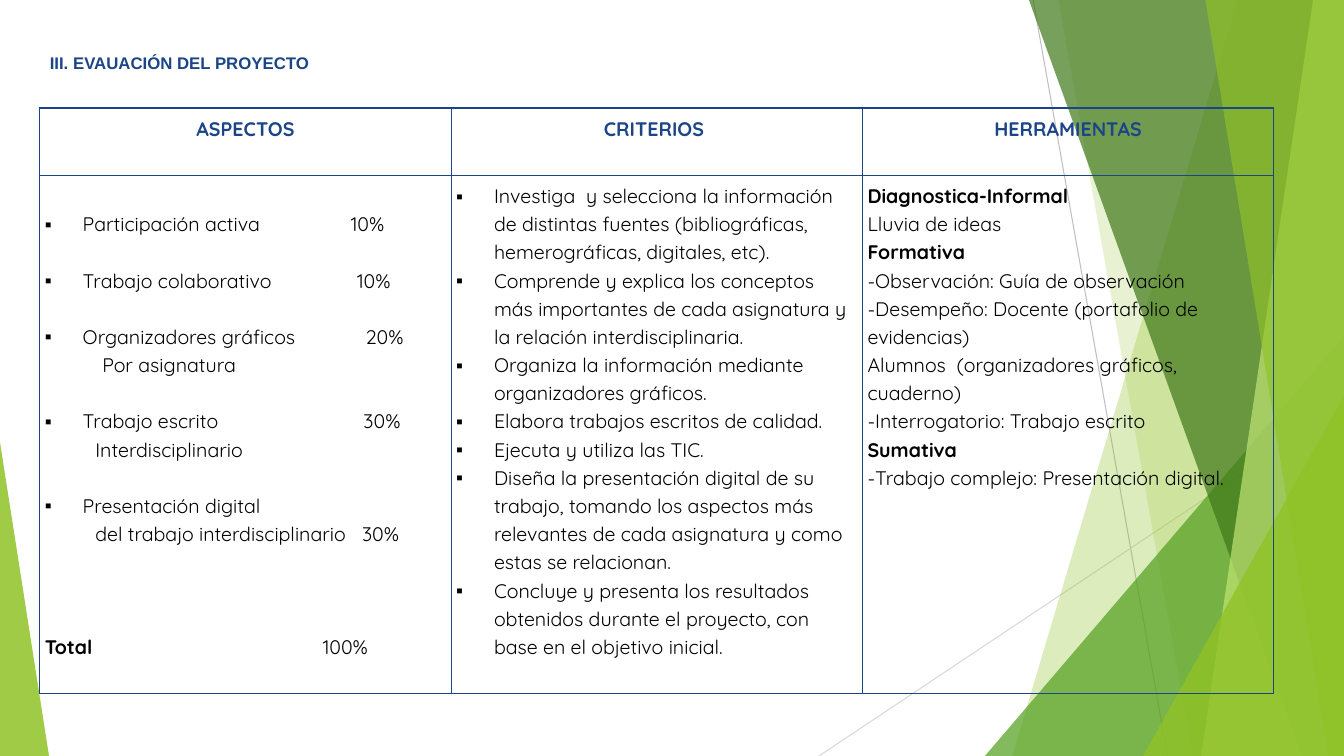
from lxml import etree
from pptx import Presentation
from pptx.dml.color import RGBColor
from pptx.enum import shapes, text
from pptx.oxml.ns import qn
from pptx.util import Pt

NAVY, LIME, LINE = "1C4587", "90C226", 20.1


def paint(fill, tone, alpha=None, node=None):
    fill.solid()
    fill.fore_color.rgb = RGBColor.from_string(tone)
    if alpha:
        clr = node.find(".//" + qn("a:srgbClr"))
        etree.SubElement(clr, qn("a:alpha"), val=str(alpha * 1000))


def write(frame, words, tail="", size=14, font="Quicksand", tone="000000", bold=False,
          align=text.PP_ALIGN.LEFT, space=1.15, gap=0, left=0, bullet=False, tab=0):
    para = frame.add_paragraph() if frame.text else frame.paragraphs[0]
    para.alignment, para.line_spacing = align, space
    para.space_before = Pt(gap)
    for part, heavy in ((words, bold), (tail, False)):
        if part:
            run = para.add_run()
            run.text = part
            run.font.size, run.font.name, run.font.bold = Pt(size), font, heavy
            paint(run.font.fill, tone)
    # A bullet hangs by its indent; a plain line hangs so that its tab meets the margin
    margin = left if bullet else max(left, tab)
    start = 0 if bullet else left
    props = para._p.get_or_add_pPr()
    props.set("marL", str(Pt(margin)))
    props.set("indent", str(Pt(start - margin)))
    if bullet:
        etree.SubElement(props, qn("a:buFont"), typeface="Arial")
        etree.SubElement(props, qn("a:buChar"), char="▪")
    else:
        etree.SubElement(props, qn("a:buNone"))
    if tab and bullet:
        stops = etree.SubElement(props, qn("a:tabLst"))
        etree.SubElement(stops, qn("a:tab"), pos=str(Pt(tab)), algn="l")


deck = Presentation()
deck.slide_width, deck.slide_height = Pt(960), Pt(540)
slide = deck.slides.add_slide(deck.slide_layouts[6])

# Thin background lines
for x1, y1, x2, y2, tone in ((738, 0, 834, 540, "BFBFBF"), (960, 290, 585, 540, "D9D9D9")):
    line = slide.shapes.add_connector(shapes.MSO_CONNECTOR.STRAIGHT, Pt(x1), Pt(y1), Pt(x2), Pt(y2))
    line.line.width = Pt(0.75)
    paint(line.line.fill, tone)
    etree.SubElement(line.element.spPr, qn("a:effectLst"))

# Green facets: full-height bands (top x, bottom x) and triangles (box, apex)
facets = [
    ((884, 723), LIME, 30),
    ((756, 852), LIME, 20),
    ((703.5, 240, 256.5, 300, 1), "54A021", 72),
    ((735, 930), "3F7819", 70),
    ((938, 858), "C0E474", 70),
    ((861, 949), LIME, 65),
    ((816.5, 283, 143.5, 257, 1), LIME, 80),
    ((0, 316, 35, 224, 0), LIME, 85),
]
for form, tone, alpha in facets:
    if len(form) == 2:
        top, low = form
        pen = slide.shapes.build_freeform(top, 0, scale=Pt(1))
        pen.add_line_segments([(960, 0), (960, 540), (low, 540)])
        facet = pen.convert_to_shape()
    else:
        facet = slide.shapes.add_shape(shapes.MSO_SHAPE.ISOSCELES_TRIANGLE, *map(Pt, form[:4]))
        facet.adjustments[0] = form[4]
    facet.shadow.inherit = False
    facet.line.fill.background()
    paint(facet.fill, tone, alpha, facet.element.spPr)

# Table grid
table = slide.shapes.add_table(2, 3, Pt(28.5), Pt(77.2), Pt(881.4), Pt(418)).table
table.first_row = table.horz_banding = False
for row, height in zip(table.rows, (48, 370)):
    row.height = Pt(height)
for col in table.columns:
    col.width = Pt(293.8)
for cell in table.iter_cells():
    cell.margin_left = cell.margin_right = cell.margin_top = cell.margin_bottom = Pt(3.6)
    props = cell._tc.get_or_add_tcPr()
    for side in ("a:lnL", "a:lnR", "a:lnT", "a:lnB"):
        edge = etree.SubElement(props, qn(side), w=str(Pt(1)))
        solid = etree.SubElement(edge, qn("a:solidFill"))
        etree.SubElement(solid, qn("a:srgbClr"), val=NAVY)
    cell.fill.background()

# Column heads
for i, head in enumerate(("ASPECTOS", "CRITERIOS ", "HERRAMIENTAS")):
    write(table.cell(0, i).text_frame, head, tone=NAVY, bold=True, align=text.PP_ALIGN.CENTER)

# Aspects: words, left indent, bullet, blank lines above, percentage stop
aspects = [
    ("Participación activa\t10%", 27, True, 0, 218.5),
    ("Trabajo colaborativo\t10%", 27, True, 1, 223),
    ("Organizadores gráficos\t20%", 27, True, 1, 229),
    ("Por asignatura", 41, False, 0, 0),
    ("Trabajo escrito\t30%", 27, True, 1, 227.5),
    ("Interdisciplinario", 36, False, 0, 0),
    ("Presentación digital", 27, True, 1, 0),
    ("del trabajo interdisciplinario\t30%", 36, False, 0, 226.5),
]
cell = table.cell(1, 0)
cell.margin_top = Pt(3.6 + LINE)
for words, left, bullet, blank, tab in aspects:
    write(cell.text_frame, words, left=left, bullet=bullet, gap=blank * LINE, tab=tab)
write(cell.text_frame, "Total", tail="\t100%", bold=True, gap=3 * LINE, tab=198.5)

# Criteria
for words in (
    "Investiga  y selecciona la información de distintas fuentes "
    "(bibliográficas, hemerográficas, digitales, etc).",
    "Comprende y explica los conceptos más importantes de cada asignatura "
    "y la relación interdisciplinaria.",
    "Organiza la información mediante organizadores gráficos.",
    "Elabora trabajos escritos de calidad.",
    "Ejecuta y utiliza las TIC.",
    "Diseña la presentación digital de su trabajo, tomando los aspectos más "
    "relevantes de cada asignatura y como estas se relacionan.",
    "Concluye y presenta los resultados obtenidos durante el proyecto, "
    "con base en el objetivo inicial.",
):
    write(table.cell(1, 1).text_frame, words, left=27, bullet=True)

# Tools, with bold group names
tools = {
    "Diagnostica-Informal": ["Lluvia de ideas"],
    "Formativa": [
        "-Observación: Guía de observación",
        "-Desempeño: Docente (portafolio de evidencias)",
        "Alumnos  (organizadores gráficos, cuaderno)",
        "-Interrogatorio: Trabajo escrito",
    ],
    "Sumativa": ["-Trabajo complejo: Presentación digital."],
}
frame = table.cell(1, 2).text_frame
for group, items in tools.items():
    write(frame, group, bold=True)
    for item in items:
        write(frame, item)

# Title
title = slide.shapes.add_textbox(Pt(28.5), Pt(33), Pt(763), Pt(44)).text_frame
title.word_wrap = True
title.margin_top = Pt(5)
write(title, "III. EVAUACIÓN DEL PROYECTO", size=12, font="Arial", tone=NAVY, bold=True, space=1)

deck.save("out.pptx")
